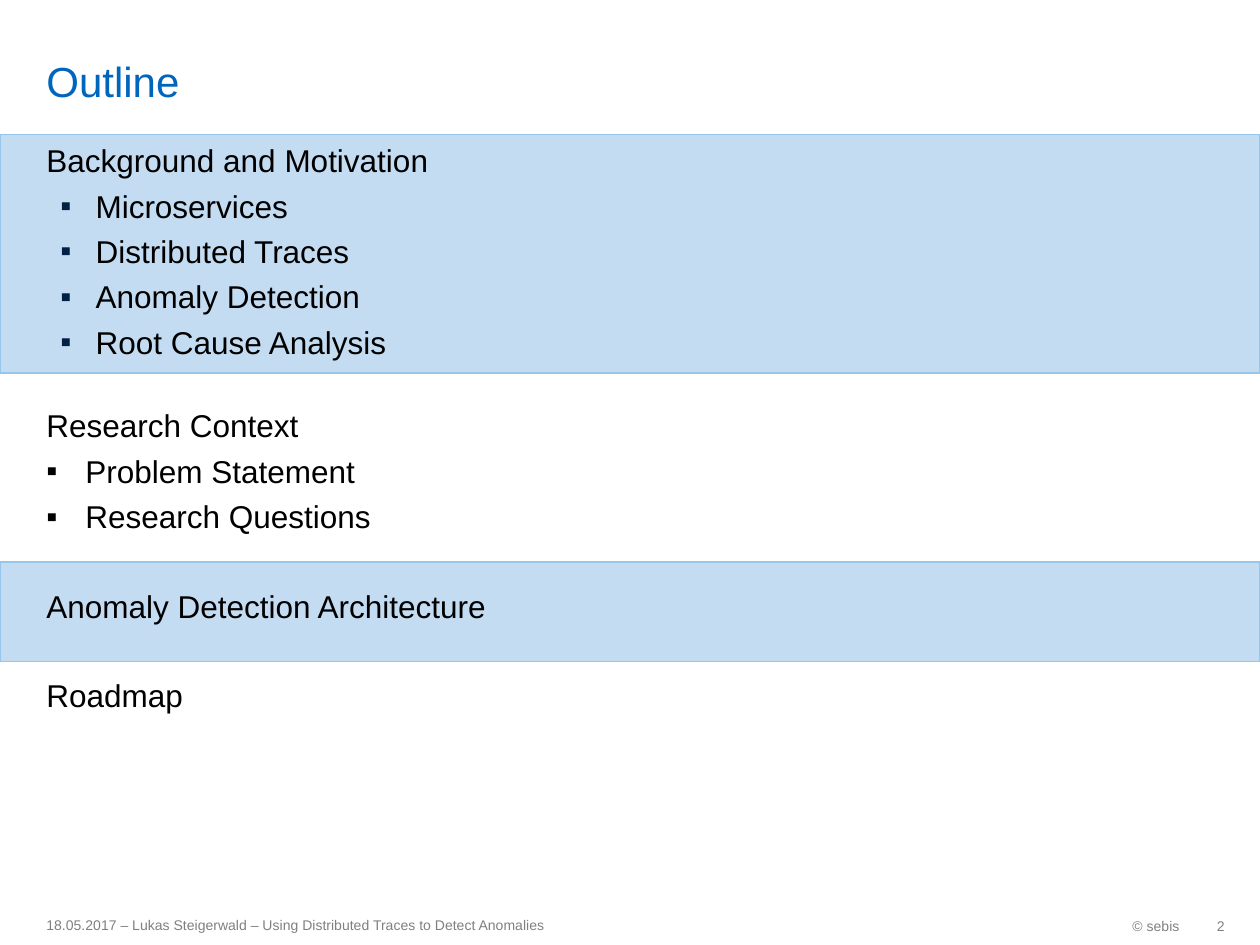
import pptx
import pptx.util
import pptx.dml.color
import pptx.enum.shapes
import pptx.enum.text
from lxml import etree
from pptx.util import Inches, Pt

COLORS = {"title": "0065BD", "text": "000000", "bullet": "002143",
          "band": "C4DCF2", "band_line": "98C6EA", "footer": "808080"}
ANCHOR = pptx.enum.text.MSO_ANCHOR
ALIGN = pptx.enum.text.PP_ALIGN
LINE_GAP = 4.4      # points before each line
SECTION_GAP = 29.6  # points before a new section

# Section heading, space before it, its bullets, bullet margin, hanging, bullet colour
SECTIONS = [
    ("Background and Motivation", 0,
     ["Microservices", "Distributed Traces", "Anomaly Detection", "Root Cause Analysis"],
     0.39, 0.28, "bullet"),
    ("Research Context", 26, ["Problem Statement", "Research Questions"],
     0.31, 0.31, "text"),
    ("Anomaly Detection Architecture", SECTION_GAP, [], 0, 0, "text"),
    ("Roadmap", SECTION_GAP, [], 0, 0, "text"),
]


def rgb(name):
    return pptx.dml.color.RGBColor.from_string(COLORS[name])


def add_band(s, top, height):
    sp = s.shapes.add_shape(pptx.enum.shapes.MSO_SHAPE.RECTANGLE,
                            0, Inches(top), Inches(10), Inches(height))
    sp.shadow.inherit = False
    sp.fill.solid()
    sp.fill.fore_color.rgb = rgb("band")
    sp.line.color.rgb = rgb("band_line")
    sp.line.width = Pt(0.75)


def add_box(s, left, top, width, height, anchor=ANCHOR.TOP, inset_y=0.05, inset_right=0.1):
    tf = s.shapes.add_textbox(*map(Inches, (left, top, width, height))).text_frame
    tf.word_wrap = True
    tf.vertical_anchor = anchor
    tf.margin_top = tf.margin_bottom = Inches(inset_y)
    tf.margin_right = Inches(inset_right)
    return tf


def set_bullet(p, margin, hanging, color):
    pPr = p._p.get_or_add_pPr()
    pPr.set("marL", str(Inches(margin)))
    pPr.set("indent", str(-Inches(hanging)))
    ns = pptx.oxml.ns.qn
    clr = etree.SubElement(pPr, ns("a:buClr"))
    etree.SubElement(clr, ns("a:srgbClr"), val=COLORS[color])
    etree.SubElement(pPr, ns("a:buFont"), typeface="Arial")
    etree.SubElement(pPr, ns("a:buChar"), char="▪")


def add_text(tf, text, size=18, color="text", align=ALIGN.LEFT, before=0, bullet=None):
    p = tf.paragraphs[0] if not tf.text else tf.add_paragraph()
    p.alignment = align
    p.space_before = Pt(before)
    if bullet:
        set_bullet(p, *bullet)
    r = p.add_run()
    r.text = text
    r.font.name = "Arial"
    r.font.size = Pt(size)
    r.font.color.rgb = rgb(color)


def add_footer(s, text, left, top, width, align, inset_right=0.1):
    tf = add_box(s, left, top, width, 0.32, ANCHOR.MIDDLE, inset_right=inset_right)
    add_text(tf, text, size=8, color="footer", align=align)


def main():
    prs = pptx.Presentation()
    prs.slide_width, prs.slide_height = Inches(10), Inches(7.5)
    s = prs.slides.add_slide(prs.slide_layouts[6])

    # Highlight bands
    add_band(s, 4.46, 0.79)
    add_band(s, 1.07, 1.89)

    # Title
    tf = add_box(s, 0.27, 0.05, 8.24, 0.79, ANCHOR.BOTTOM, inset_y=0)
    add_text(tf, "Outline", size=24, color="title")

    # Outline
    tf = add_box(s, 0.27, 1.07, 9.45, 5.91)
    for heading, before, items, margin, hanging, color in SECTIONS:
        add_text(tf, heading, before=before)
        for item in items:
            add_text(tf, item, before=LINE_GAP, bullet=(margin, hanging, color))

    # Footer
    add_footer(s, "© sebis", 7.7, 7.19, 1.76, ALIGN.RIGHT)
    add_footer(s, "18.05.2017 – Lukas Steigerwald – Using Distributed Traces to Detect Anomalies",
               0.27, 7.18, 4.73, ALIGN.LEFT)
    add_footer(s, "2", 9.45, 7.19, 0.27, ALIGN.RIGHT, inset_right=0)

    prs.save("out.pptx")


if __name__ == "__main__":
    main()
